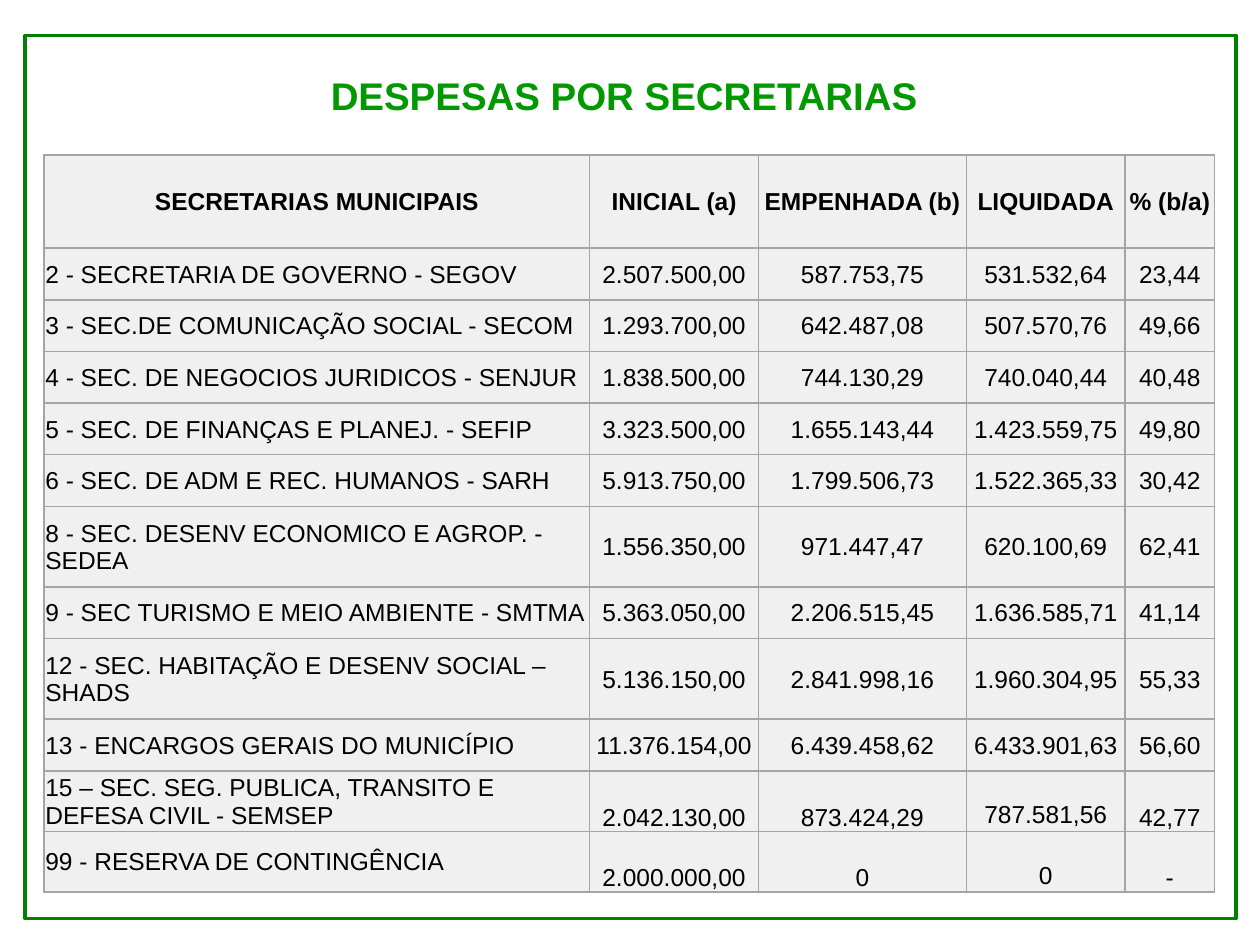
import pptx
import pptx.util
import pptx.dml.color
import pptx.enum.shapes
import pptx.enum.text
import pptx.oxml
import pptx.oxml.ns
from pptx.util import Inches

TITLE = "DESPESAS POR SECRETARIAS "
HEADERS = ["SECRETARIAS MUNICIPAIS", "INICIAL (a)", "EMPENHADA (b)", "LIQUIDADA", "% (b/a)"]
EXPENSES = [
    ("2 - SECRETARIA DE GOVERNO - SEGOV", "2.507.500,00", "587.753,75", "531.532,64", "23,44"),
    ("3 - SEC.DE COMUNICAÇÃO SOCIAL - SECOM", "1.293.700,00", "642.487,08", "507.570,76", "49,66"),
    ("4 - SEC. DE NEGOCIOS JURIDICOS - SENJUR", "1.838.500,00", "744.130,29", "740.040,44", "40,48"),
    ("5 - SEC. DE FINANÇAS E PLANEJ. - SEFIP", "3.323.500,00", "1.655.143,44", "1.423.559,75", "49,80"),
    ("6 - SEC. DE ADM E REC. HUMANOS - SARH", "5.913.750,00", "1.799.506,73", "1.522.365,33", "30,42"),
    ("8 - SEC. DESENV ECONOMICO E AGROP. - SEDEA", "1.556.350,00", "971.447,47", "620.100,69", "62,41"),
    ("9 - SEC TURISMO E MEIO AMBIENTE - SMTMA", "5.363.050,00", "2.206.515,45", "1.636.585,71", "41,14"),
    ("12 - SEC. HABITAÇÃO E DESENV SOCIAL – SHADS", "5.136.150,00", "2.841.998,16", "1.960.304,95", "55,33"),
    ("13 - ENCARGOS GERAIS DO MUNICÍPIO", "11.376.154,00", "6.439.458,62", "6.433.901,63", "56,60"),
    ("15 – SEC. SEG. PUBLICA, TRANSITO E DEFESA CIVIL - SEMSEP",
     "2.042.130,00", "873.424,29", "787.581,56", "42,77"),
    ("99 - RESERVA DE CONTINGÊNCIA", "2.000.000,00", "0", "0", "-"),
]
COLUMN_WIDTHS = [4.33, 1.34, 1.65, 1.26, 0.71]
ROW_HEIGHTS = [0.74] + [0.41] * 5 + [0.64, 0.41, 0.64, 0.41, 0.48, 0.48]
FIRST_BOTTOM_ROW = 10
LIQUIDATED_COLUMN = 3

ALIGN = pptx.enum.text.PP_ALIGN
ANCHOR = pptx.enum.text.MSO_ANCHOR


def color(value):
    return pptx.dml.color.RGBColor.from_string(value)


def write(frame, text, size=14, bold=False, ink="000000", align=ALIGN.CENTER):
    para = frame.paragraphs[0]
    para.alignment = align
    span = para.add_run()
    span.text = text
    span.font.name = "Arial"
    span.font.size = pptx.util.Pt(size)
    span.font.bold = bold
    span.font.color.rgb = color(ink)


def add_borders(cell, ink="A5A5A5", points=1):
    properties = cell._tc.get_or_add_tcPr()
    for position, side in enumerate(("lnL", "lnR", "lnT", "lnB")):
        properties.insert(position, pptx.oxml.parse_xml(
            f'<a:{side} {pptx.oxml.ns.nsdecls("a")} w="{pptx.util.Pt(points)}">'
            f'<a:solidFill><a:srgbClr val="{ink}"/></a:solidFill></a:{side}>'))


def add_frame(page):
    border = page.shapes.add_shape(pptx.enum.shapes.MSO_SHAPE.RECTANGLE,
                                   Inches(0.2), Inches(0.28), Inches(9.61), Inches(7.01))
    border.shadow.inherit = False
    border.fill.background()
    border.line.color.rgb = color("008000")
    border.line.width = pptx.util.Pt(2)


def add_title(page):
    box = page.shapes.add_textbox(Inches(0.94), Inches(0.52), Inches(8.11), Inches(0.47))
    box.text_frame.word_wrap = True
    box.text_frame.auto_size = pptx.enum.text.MSO_AUTO_SIZE.SHAPE_TO_FIT_TEXT
    write(box.text_frame, TITLE, size=22, bold=True, ink="009900")


def add_expense_table(page):
    rows = [HEADERS] + EXPENSES
    table = page.shapes.add_table(len(rows), len(HEADERS), Inches(0.35), Inches(1.23),
                                  Inches(sum(COLUMN_WIDTHS)), Inches(sum(ROW_HEIGHTS))).table
    for column, width in zip(table.columns, COLUMN_WIDTHS):
        column.width = Inches(width)
    for row_index, (values, height) in enumerate(zip(rows, ROW_HEIGHTS)):
        table.rows[row_index].height = Inches(height)
        for column_index, value in enumerate(values):
            cell = table.cell(row_index, column_index)
            header = row_index == 0
            name = column_index == 0 and not header
            bottom = row_index >= FIRST_BOTTOM_ROW and not name
            raised = bottom and column_index == LIQUIDATED_COLUMN
            cell.margin_left = cell.margin_right = cell.margin_top = Inches(0.01)
            cell.margin_bottom = Inches(0.02 if raised else 0)
            cell.vertical_anchor = ANCHOR.BOTTOM if bottom else ANCHOR.MIDDLE
            cell.fill.solid()
            cell.fill.fore_color.rgb = color("F0F0F0")
            add_borders(cell)
            write(cell.text_frame, value, bold=header, align=ALIGN.LEFT if name else ALIGN.CENTER)


def main():
    deck = pptx.Presentation()
    deck.slide_width, deck.slide_height = Inches(10), Inches(7.5)
    page = deck.slides.add_slide(deck.slide_layouts[6])
    add_frame(page)
    add_title(page)
    add_expense_table(page)
    deck.save("out.pptx")


if __name__ == "__main__":
    main()
